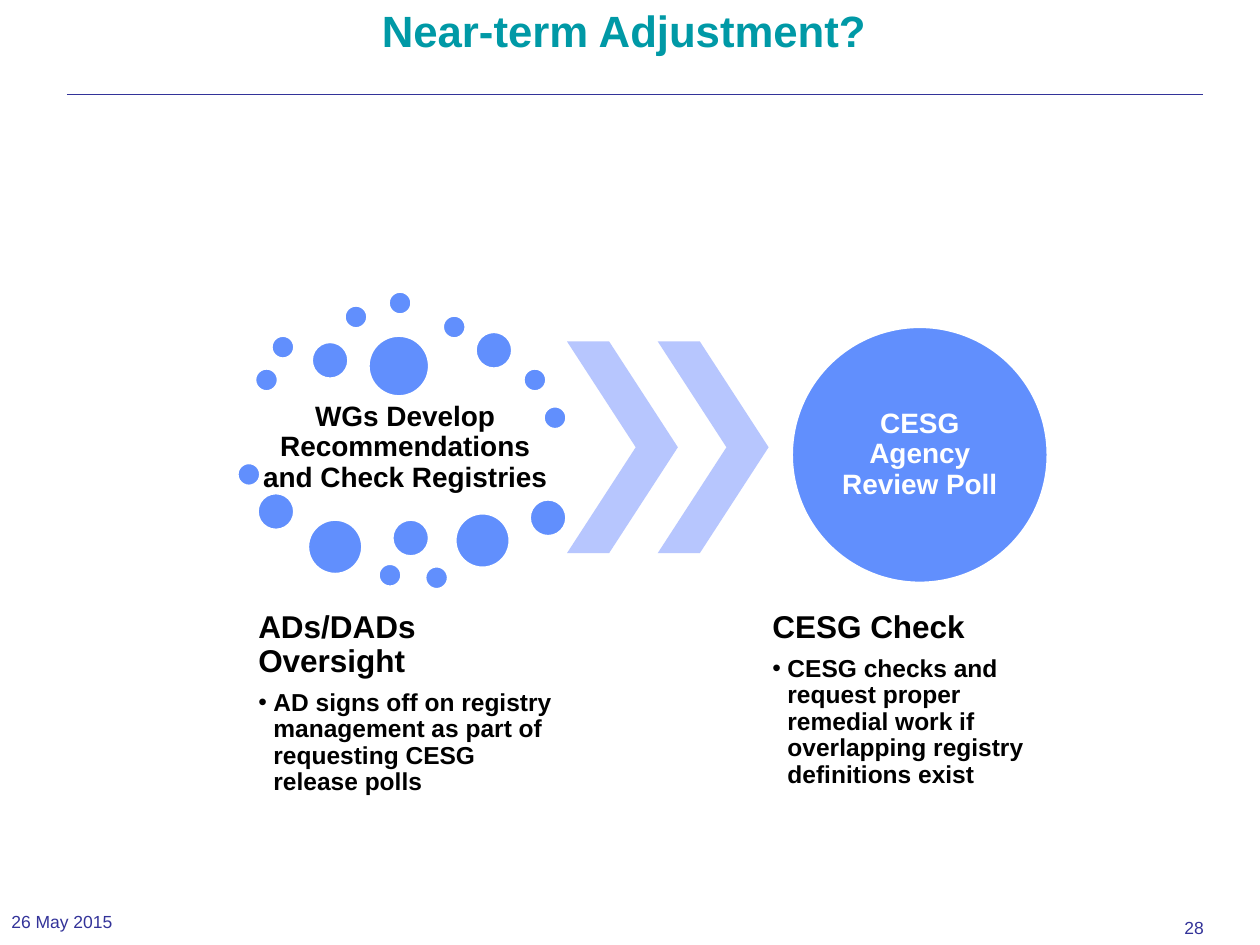
from lxml import etree
from pptx import Presentation
from pptx.dml.color import RGBColor
from pptx.enum.shapes import MSO_CONNECTOR, MSO_SHAPE
from pptx.enum.text import MSO_ANCHOR, PP_ALIGN
from pptx.oxml.ns import qn
from pptx.util import Inches, Pt

OVAL, CHEVRON = MSO_SHAPE.OVAL, MSO_SHAPE.CHEVRON
TOP, MIDDLE = MSO_ANCHOR.TOP, MSO_ANCHOR.MIDDLE
LEFT, CENTER = PP_ALIGN.LEFT, PP_ALIGN.CENTER

FONT = "Arial"
BLUE, PALE_BLUE, NAVY = "618FFD", "B7C6FE", "333399"
TEAL, BLACK, WHITE = "0099A6", "000000", "FFFFFF"

SMALL, MEDIUM, LARGE, LARGEST = 0.19, 0.3, 0.44, 0.49
# Offsets from the corner of the cluster, by dot diameter
DOTS = {
    SMALL: [(0.14, 0.61), (0.27, 0.35), (0.85, 0.11), (1.2, 0), (1.63, 0.19),
            (2.27, 0.61), (2.43, 0.91), (0, 1.36), (1.12, 2.16), (1.49, 2.18)],
    MEDIUM: [(0.59, 0.4), (1.89, 0.32), (0.16, 1.6), (1.23, 1.81), (2.32, 1.65)],
    LARGE: [(0.56, 1.81), (1.73, 1.76)],
    LARGEST: [(1.04, 0.35)],
}


def rgb(color):
    return RGBColor.from_string(color)


def add_solid(slide, kind, left, top, width, height, color, outline=None):
    solid = slide.shapes.add_shape(
        kind, Inches(left), Inches(top), Inches(width), Inches(height))
    solid.shadow.inherit = False
    solid.fill.solid()
    solid.fill.fore_color.rgb = rgb(color)
    if outline:
        solid.line.color.rgb = rgb(outline)
        solid.line.width = Pt(2)
    else:
        solid.line.fill.background()
    return solid


def add_frame(slide, left, top, width, height, inset_x, inset_y,
              anchor=TOP, wrap=True):
    frame = slide.shapes.add_textbox(
        Inches(left), Inches(top), Inches(width), Inches(height)).text_frame
    frame.margin_left = frame.margin_right = Inches(inset_x)
    frame.margin_top = frame.margin_bottom = Inches(inset_y)
    frame.vertical_anchor = anchor
    frame.word_wrap = wrap
    return frame


def write(paragraph, text, size, color, bold=True, align=LEFT,
          line_spacing=0.9, space_after=0):
    paragraph.text = text
    paragraph.alignment = align
    paragraph.line_spacing = line_spacing
    paragraph.space_after = Pt(space_after)
    paragraph.font.name = FONT
    paragraph.font.size = Pt(size)
    paragraph.font.bold = bold
    paragraph.font.color.rgb = rgb(color)


def add_bullet(paragraph, indent):
    properties = paragraph._p.get_or_add_pPr()
    properties.set("marL", str(Inches(indent)))
    properties.set("indent", str(-Inches(indent)))
    etree.SubElement(properties, qn("a:buFont")).set("typeface", FONT)
    etree.SubElement(properties, qn("a:buChar")).set("char", "•")


def add_header(slide, left, top, width, height):
    title = add_frame(slide, left, top, width, height, 0.1, 0.05)
    write(title.paragraphs[0], "Near-term Adjustment?", 25, TEAL, align=CENTER)
    rule_y = Inches(top + 0.72)
    rule = slide.shapes.add_connector(
        MSO_CONNECTOR.STRAIGHT, Inches(0.53), rule_y, Inches(9.55), rule_y)
    rule.line.color.rgb = rgb(NAVY)
    rule.line.width = Pt(0.13)
    etree.SubElement(rule._element.spPr, qn("a:effectLst"))


def add_footer(slide, top):
    date = add_frame(slide, 0, top, 1.89, 0.29, 0.09, 0.05, MIDDLE, False)
    number = add_frame(slide, 9.31, top + 0.07, 0.35, 0.26, 0.09, 0.04, wrap=False)
    for frame, text in ((date, "26 May 2015"), (number, "28")):
        write(frame.paragraphs[0], text, 10, NAVY, bold=False, line_spacing=1)


def add_dot_cluster(slide, left, top, text):
    label = add_frame(slide, left + 0.14, top + 0.85, 2.39, 0.79, 0.02, 0.02, MIDDLE)
    write(label.paragraphs[0], text, 16, BLACK, align=CENTER)
    for diameter, offsets in DOTS.items():
        for x, y in offsets:
            add_solid(slide, OVAL, left + x, top + y, diameter, diameter, BLUE, WHITE)


def add_chevrons(slide, left, top, pitch):
    for step in range(2):
        chevron = add_solid(slide, CHEVRON, left + step * pitch, top,
                            0.88, 1.68, PALE_BLUE)
        chevron.adjustments[0] = 0.62


def add_result_circle(slide, left, top, diameter, text):
    add_solid(slide, OVAL, left, top, diameter, diameter, BLUE, WHITE)
    inset = 0.3
    side = diameter - 2 * inset
    label = add_frame(slide, left + inset, top + inset, side, side, 0, 0, MIDDLE)
    write(label.paragraphs[0], text, 16, WHITE, align=CENTER)


def add_description(slide, left, top, heading, detail):
    frame = add_frame(slide, left, top, 2.4, 1.48, 0.03, 0.03)
    write(frame.paragraphs[0], heading, 18, BLACK, space_after=6.3)
    item = frame.add_paragraph()
    add_bullet(item, 0.12)
    write(item, detail, 14, BLACK, space_after=2.1)


def main():
    deck = Presentation()
    deck.slide_width, deck.slide_height = Inches(10), Inches(7.5)
    slide = deck.slides.add_slide(deck.slide_layouts[6])

    add_header(slide, 0.64, 0.03, 8.62, 1.09)
    add_dot_cluster(slide, 1.88, 2.31,
                    "WGs Develop Recommendations and Check Registries")
    add_chevrons(slide, 4.5, 2.71, 0.72)
    add_result_circle(slide, 6.28, 2.59, 2.04, "CESG Agency Review Poll")
    add_description(slide, 2.02, 4.82, "ADs/DADs Oversight",
                    "AD signs off on registry management as part of "
                    "requesting CESG release polls")
    add_description(slide, 6.1, 4.82, "CESG Check",
                    "CESG checks and request proper remedial work if "
                    "overlapping registry definitions exist")
    add_footer(slide, 7.17)

    deck.save("out.pptx")


if __name__ == "__main__":
    main()
